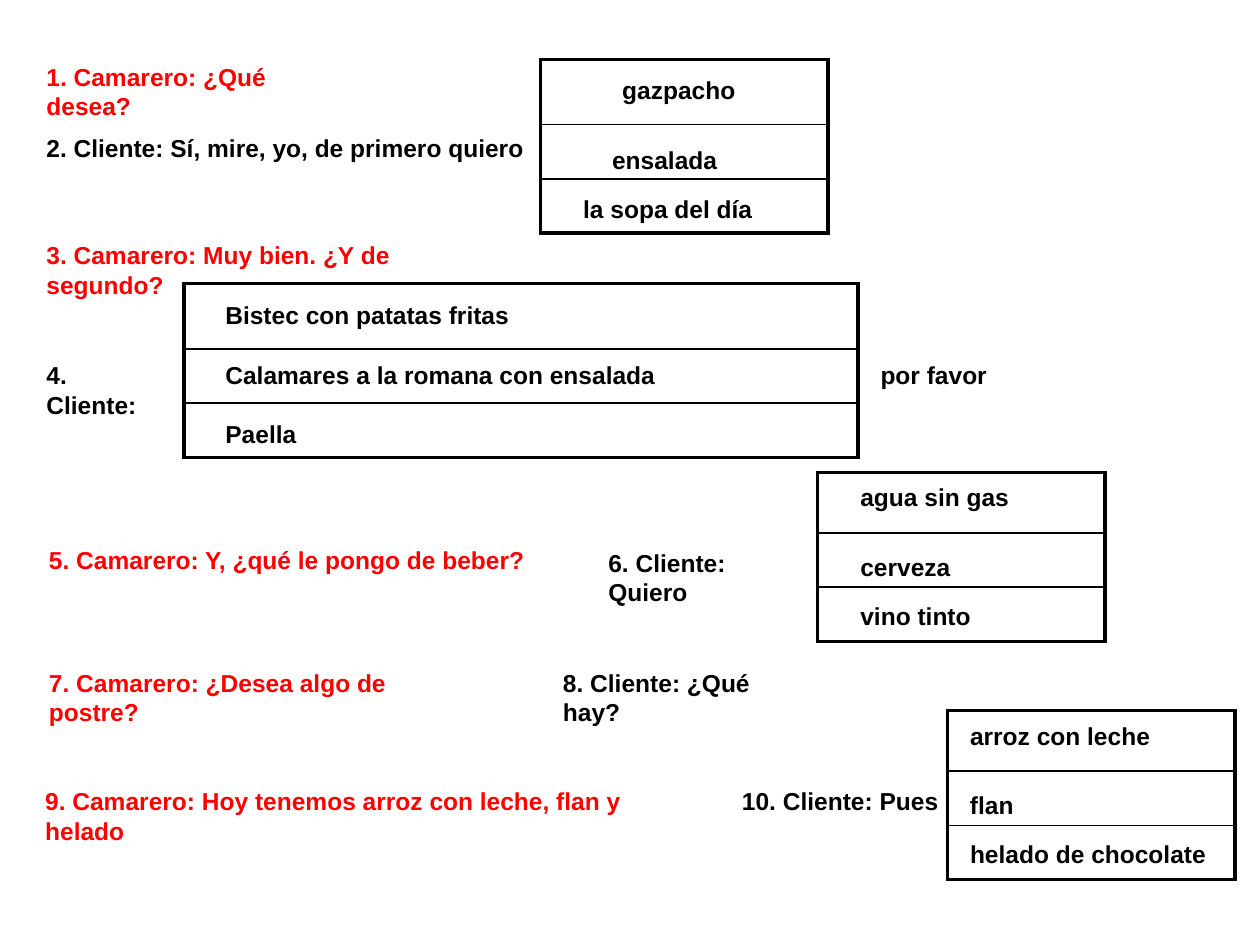
"""Build a restaurant dialogue slide with a menu grid for each of the customer's choices."""
import pptx
import pptx.dml.color
import pptx.enum.text
import pptx.util
from lxml import etree
from pptx.oxml.ns import qn

Inches = pptx.util.Inches
FONT, SIZE = "Arial", 14
RED, BLACK = "FF0000", "000000"
LINE_HEIGHT = 0.33
LOWER_ROW = 0.43
OUTER, INNER = 2.25, 1

DIALOGUE = [
    ("1. Camarero: ¿Qué desea?", 0.27, 0.44, 2.64, RED),
    ("2. Cliente: Sí, mire, yo, de primero quiero", 0.27, 1.01, 5.04, BLACK),
    ("3. Camarero: Muy bien. ¿Y de segundo?", 0.27, 1.86, 3.87, RED),
    ("4. Cliente:", 0.27, 2.81, 1.11, BLACK),
    ("por favor", 6.89, 2.81, 1.06, BLACK),
    ("5. Camarero: Y, ¿qué le pongo de beber?", 0.29, 4.28, 4.0, RED),
    ("6. Cliente: Quiero", 4.73, 4.3, 1.79, BLACK),
    ("7. Camarero: ¿Desea algo de postre?", 0.29, 5.25, 3.61, RED),
    ("8. Cliente: ¿Qué hay?", 4.37, 5.25, 2.16, BLACK),
    ("9. Camarero: Hoy tenemos arroz con leche, flan y helado", 0.26, 6.19, 5.41, RED),
    ("10. Cliente: Pues", 5.79, 6.19, 1.81, BLACK),
]

MENUS = [
    {"left": 4.29, "top": 0.47, "width": 2.28, "first_row": 0.52, "dishes": [
        ("gazpacho", 4.84, 0.55, 1.5),
        ("ensalada", 4.76, 1.1, 1.34),
        ("la sopa del día", 4.53, 1.49, 2.28)]},
    {"left": 1.46, "top": 2.25, "width": 5.35, "first_row": 0.52, "dishes": [
        ("Bistec con patatas fritas", 1.69, 2.33, 3.31),
        ("Calamares a la romana con ensalada", 1.69, 2.81, 5.12),
        ("Paella", 1.69, 3.28, 2.28)]},
    {"left": 6.49, "top": 3.75, "width": 2.28, "first_row": 0.48, "dishes": [
        ("agua sin gas", 6.73, 3.78, 1.5),
        ("cerveza", 6.73, 4.33, 1.34),
        ("vino tinto", 6.73, 4.72, 2.28)]},
    {"left": 7.52, "top": 5.64, "width": 2.28, "first_row": 0.48, "dishes": [
        ("arroz con leche", 7.6, 5.67, 2.05),
        ("flan", 7.6, 6.22, 1.34),
        ("helado de chocolate", 7.6, 6.61, 2.28)]},
]


def color(value):
    return pptx.dml.color.RGBColor.from_string(value)


def add_text(slide, text, left, top, width, ink=BLACK):
    box = slide.shapes.add_textbox(
        Inches(left), Inches(top), Inches(width), Inches(LINE_HEIGHT))
    frame = box.text_frame
    frame.word_wrap = True
    frame.auto_size = pptx.enum.text.MSO_AUTO_SIZE.SHAPE_TO_FIT_TEXT
    para = frame.paragraphs[0]
    span = para.add_run()
    span.text = text
    span.font.name = FONT
    span.font.size = pptx.util.Pt(SIZE)
    span.font.bold = True
    span.font.color.rgb = color(ink)


def set_borders(cell, widths):
    properties = cell._tc.get_or_add_tcPr()
    for position, (side, points) in enumerate(widths.items()):
        line = etree.Element(qn(f"a:ln{side}"), w=str(pptx.util.Pt(points)))
        fill = etree.SubElement(line, qn("a:solidFill"))
        etree.SubElement(fill, qn("a:srgbClr"), val=BLACK)
        properties.insert(position, line)


def add_menu(slide, left, top, width, first_row, dishes):
    heights = [first_row] + [LOWER_ROW] * (len(dishes) - 1)
    table = slide.shapes.add_table(
        len(dishes), 1, Inches(left), Inches(top),
        Inches(width), Inches(sum(heights))).table
    table.first_row = table.horz_banding = False
    last = len(heights) - 1
    for index, height in enumerate(heights):
        table.rows[index].height = Inches(height)
        cell = table.cell(index, 0)
        cell.fill.background()
        set_borders(cell, {
            "L": OUTER,
            "R": OUTER,
            "T": OUTER if index == 0 else INNER,
            "B": OUTER if index == last else INNER,
        })
    for dish in dishes:
        add_text(slide, *dish)


def main():
    deck = pptx.Presentation()
    deck.slide_width, deck.slide_height = Inches(10), Inches(7.5)
    slide = deck.slides.add_slide(deck.slide_layouts[6])
    for menu in MENUS:
        add_menu(slide, **menu)
    for line in DIALOGUE:
        add_text(slide, *line)
    deck.save("out.pptx")


if __name__ == "__main__":
    main()
